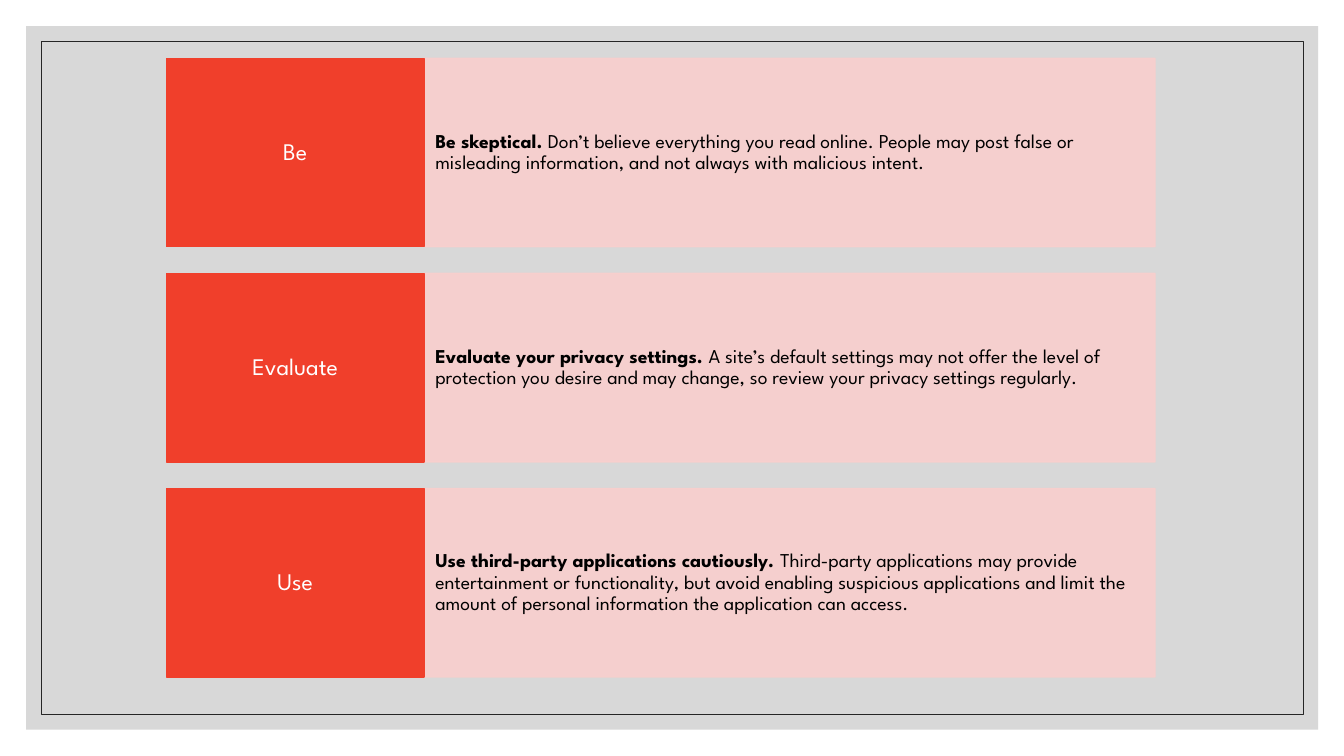
import pptx
import pptx.dml.color
import pptx.enum.shapes
import pptx.enum.text
import pptx.oxml
import pptx.oxml.ns
import pptx.util

Cm = pptx.util.Cm
Pt = pptx.util.Pt

ROWS = [
    ("Be", "Be skeptical. ",
     "Don’t believe everything you read online. People may post false or "
     "misleading information, and not always with malicious intent."),
    ("Evaluate", "Evaluate your privacy settings. ",
     "A site’s default settings may not offer the level of protection you "
     "desire and may change, so review your privacy settings regularly."),
    ("Use", "Use third-party applications cautiously. ",
     "Third-party applications may provide entertainment or functionality, "
     "but avoid enabling suspicious applications and limit the amount of "
     "personal information the application can access."),
]


def color(hex_code):
    return pptx.dml.color.RGBColor.from_string(hex_code)


class SlideBuilder:
    """Hold the style and current slide, and add its frames and text panels."""

    font_name = "League Spartan"
    red, pink, grey, dark = "F03F2B", "F9CFCD", "BFBFBF", "262626"

    def __init__(self, slide):
        self.slide = slide

    def paint(self, fill, hex_code, opacity):
        fill.solid()
        fill.fore_color.rgb = color(hex_code)
        if opacity < 100:
            alpha = pptx.oxml.parse_xml(
                f'<a:alpha {pptx.oxml.ns.nsdecls("a")} val="{opacity * 1000}"/>')
            fill._xPr.find(".//" + pptx.oxml.ns.qn("a:srgbClr")).append(alpha)

    def rectangle(self, left, top, width, height, fill=None, line=None,
                  line_width=1, opacity=100):
        shape = self.slide.shapes.add_shape(
            pptx.enum.shapes.MSO_SHAPE.RECTANGLE,
            Cm(left), Cm(top), Cm(width), Cm(height))
        shape.shadow.inherit = False
        if fill:
            self.paint(shape.fill, fill, opacity)
        else:
            shape.fill.background()
        if line:
            self.paint(shape.line.fill, line, opacity)
            shape.line.width = Pt(line_width)
        else:
            shape.line.fill.background()
        return shape

    def panel(self, left, top, width, height, fill, runs, size, text_color,
              alignment, margins, opacity=100):
        shape = self.rectangle(left, top, width, height, fill, fill,
                               opacity=opacity)
        frame = shape.text_frame
        frame.word_wrap = True
        frame.vertical_anchor = pptx.enum.text.MSO_ANCHOR.MIDDLE
        frame.margin_left = frame.margin_right = Cm(margins[0])
        frame.margin_top = frame.margin_bottom = Cm(margins[1])
        paragraph = frame.paragraphs[0]
        paragraph.alignment = alignment
        paragraph.line_spacing = 0.9
        paragraph.font.name = self.font_name
        paragraph.font.size = Pt(size)
        paragraph.font.color.rgb = color(text_color)
        for text, bold in runs:
            run = paragraph.add_run()
            run.text = text
            run.font.bold = bold

    def heading(self, top, height, text):
        self.panel(4.19, top, 6.5, height, self.red, [(text, False)], 17,
                   "FFFFFF", pptx.enum.text.PP_ALIGN.CENTER, (0.2, 0.46))

    def advice(self, top, height, lead, text):
        self.panel(10.67, top, 18.44, height, self.pink,
                   [(lead, True), (text, False)], 14, "000000",
                   pptx.enum.text.PP_ALIGN.LEFT, (0.3, 1.19), opacity=90)


def main():
    presentation = pptx.Presentation()
    presentation.slide_width = Cm(33.87)
    presentation.slide_height = Cm(19.05)
    slide = presentation.slides.add_slide(presentation.slide_layouts[6])
    builder = SlideBuilder(slide)
    builder.rectangle(0.66, 0.66, 32.56, 17.73, fill=builder.grey, opacity=60)
    builder.rectangle(1.04, 1.04, 31.8, 16.97, line=builder.dark,
                      line_width=0.5)
    first_top, row_height, row_step = 1.47, 4.75, 5.42
    for index, (title, lead, text) in enumerate(ROWS):
        top = first_top + index * row_step
        builder.advice(top, row_height, lead, text)
        builder.heading(top, row_height, title)
    presentation.save("out.pptx")


if __name__ == "__main__":
    main()
